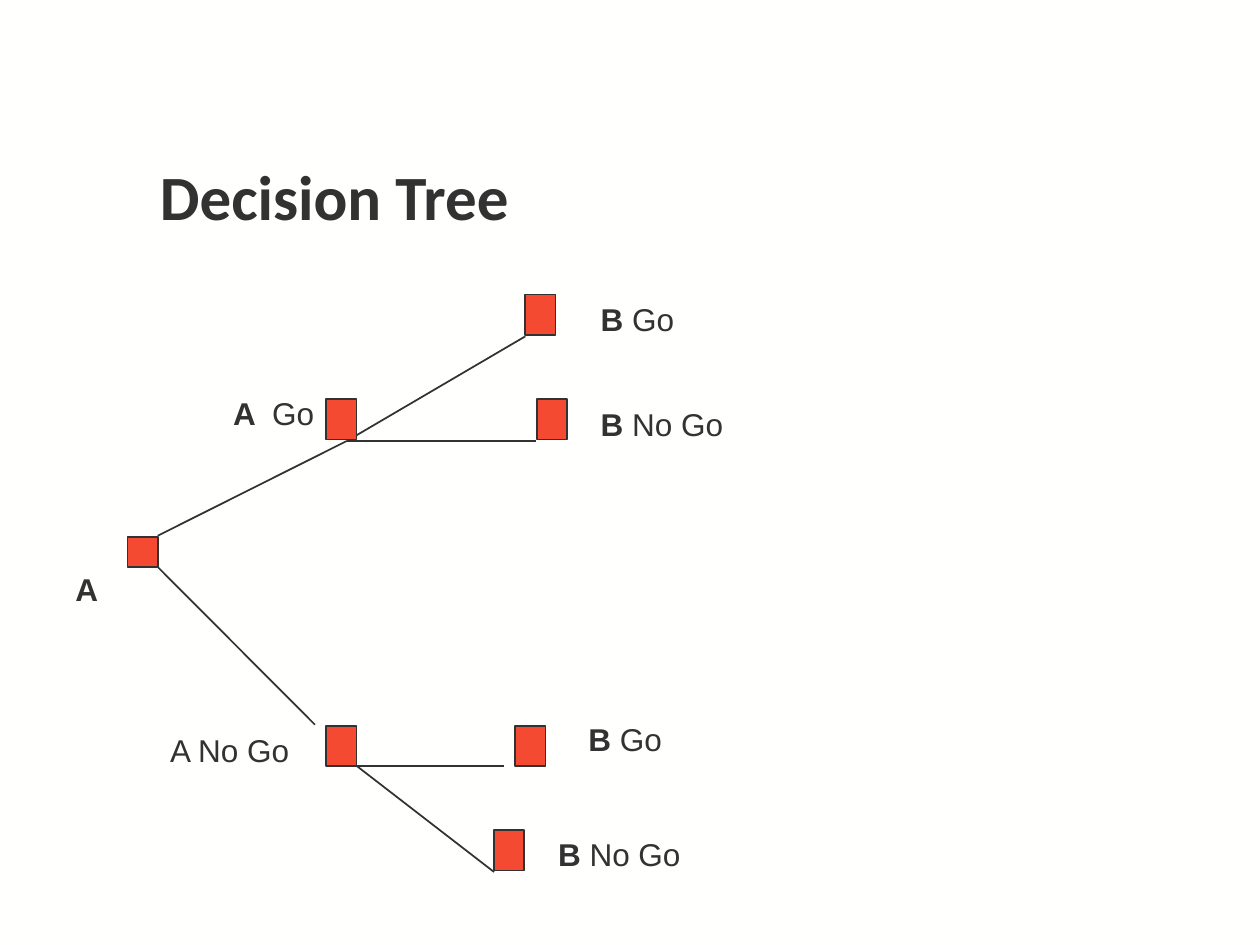
from dataclasses import dataclass
from pptx import Presentation
from pptx.dml.color import RGBColor as Rgb
from pptx.enum.shapes import MSO_CONNECTOR as Link, MSO_SHAPE as Kind
from pptx.enum.text import MSO_ANCHOR as Anchor, MSO_AUTO_SIZE as Fit, PP_ALIGN as Align
from pptx.util import Cm, Pt
from lxml.etree import SubElement
from pptx.oxml.ns import qn


@dataclass(frozen=True)
class Theme:
    paper: Rgb = Rgb.from_string("FFFFFE")
    ink: Rgb = Rgb.from_string("313231")
    node: Rgb = Rgb.from_string("F44A31")
    head: str = "Calibri"
    body: str = "Arial"
    big: Pt = Pt(36)
    text: Pt = Pt(18)
    line: Pt = Pt(1)


def apply(item, **form):
    for key, val in form.items():
        setattr(item, key, val)


class Deck:
    def __init__(self, theme):
        self.theme = theme
        self.show = Presentation()
        apply(self.show, slide_width=Cm(25.4), slide_height=Cm(19.05))
        self.slide = self.show.slides.add_slide(self.show.slide_layouts[5])
        fill = self.slide.background.fill
        fill.solid()
        fill.fore_color.rgb = theme.paper

    def font(self, run, name, size, bold):
        apply(run.font, name=name, size=size, bold=bold)
        run.font.color.rgb = self.theme.ink

    def edge(self, line):
        line.width = self.theme.line
        line.color.rgb = self.theme.ink

    def title(self, text, x, y, w, h):
        box = self.slide.shapes.title
        apply(box, left=Cm(x), top=Cm(y), width=Cm(w), height=Cm(h))
        apply(box.text_frame, vertical_anchor=Anchor.BOTTOM, auto_size=Fit.NONE)
        para = box.text_frame.paragraphs[0]
        para.alignment = Align.LEFT
        run = para.add_run()
        run.text = text
        self.font(run, self.theme.head, self.theme.big, True)

    def node(self, x, y, h=0.81):
        box = self.slide.shapes.add_shape(Kind.RECTANGLE, Cm(x), Cm(y), Cm(0.61), Cm(h))
        box.shadow.inherit = False
        box.fill.solid()
        box.fill.fore_color.rgb = self.theme.node
        self.edge(box.line)

    def branch(self, start, end):
        ends = [Cm(v) for v in start + end]
        link = self.slide.shapes.add_connector(Link.STRAIGHT, *ends)
        self.edge(link.line)
        SubElement(link._element.spPr, qn("a:effectLst"))

    def label(self, x, y, w, bold, plain):
        box = self.slide.shapes.add_textbox(Cm(x), Cm(y), Cm(w), Cm(1.02))
        apply(box.text_frame, word_wrap=False, auto_size=Fit.SHAPE_TO_FIT_TEXT)
        para = box.text_frame.paragraphs[0]
        for text, heavy in ((bold, True), (plain, False)):
            if text:
                run = para.add_run()
                run.text = text
                self.font(run, self.theme.body, self.theme.text, heavy)


def main():
    deck = Deck(Theme())
    deck.title("Decision Tree", 2.97, 0.84, 20.96, 3.99)

    go, stop = (6.99, 8.89), (7.19, 15.44)
    for start, end in (
        ((3.18, 10.8), go),
        ((3.18, 11.43), (6.35, 14.61)),
        (go, (10.59, 6.78)),
        (go, (10.8, 8.89)),
        (stop, (10.16, 15.44)),
        (stop, (9.96, 17.58)),
    ):
        deck.branch(start, end)

    for item in (
        (1.27, 11.37, 1.12, "A", ""),
        (4.45, 7.82, 2.16, "A ", " Go"),
        (3.18, 14.61, 2.95, "", "A No Go"),
        (11.86, 5.92, 3.4, "B", " Go"),
        (11.86, 8.05, 3.02, "B", " No Go"),
        (11.61, 14.4, 3.28, "B", " Go"),
        (11, 16.71, 3.02, "B", " No Go"),
    ):
        deck.label(*item)

    deck.node(2.57, 10.82, 0.61)
    for x, y in (
        (6.58, 8.05), (10.59, 5.94), (10.82, 8.05),
        (6.58, 14.63), (10.39, 14.63), (9.96, 16.74),
    ):
        deck.node(x, y)

    deck.show.save("out.pptx")


if __name__ == "__main__":
    main()
